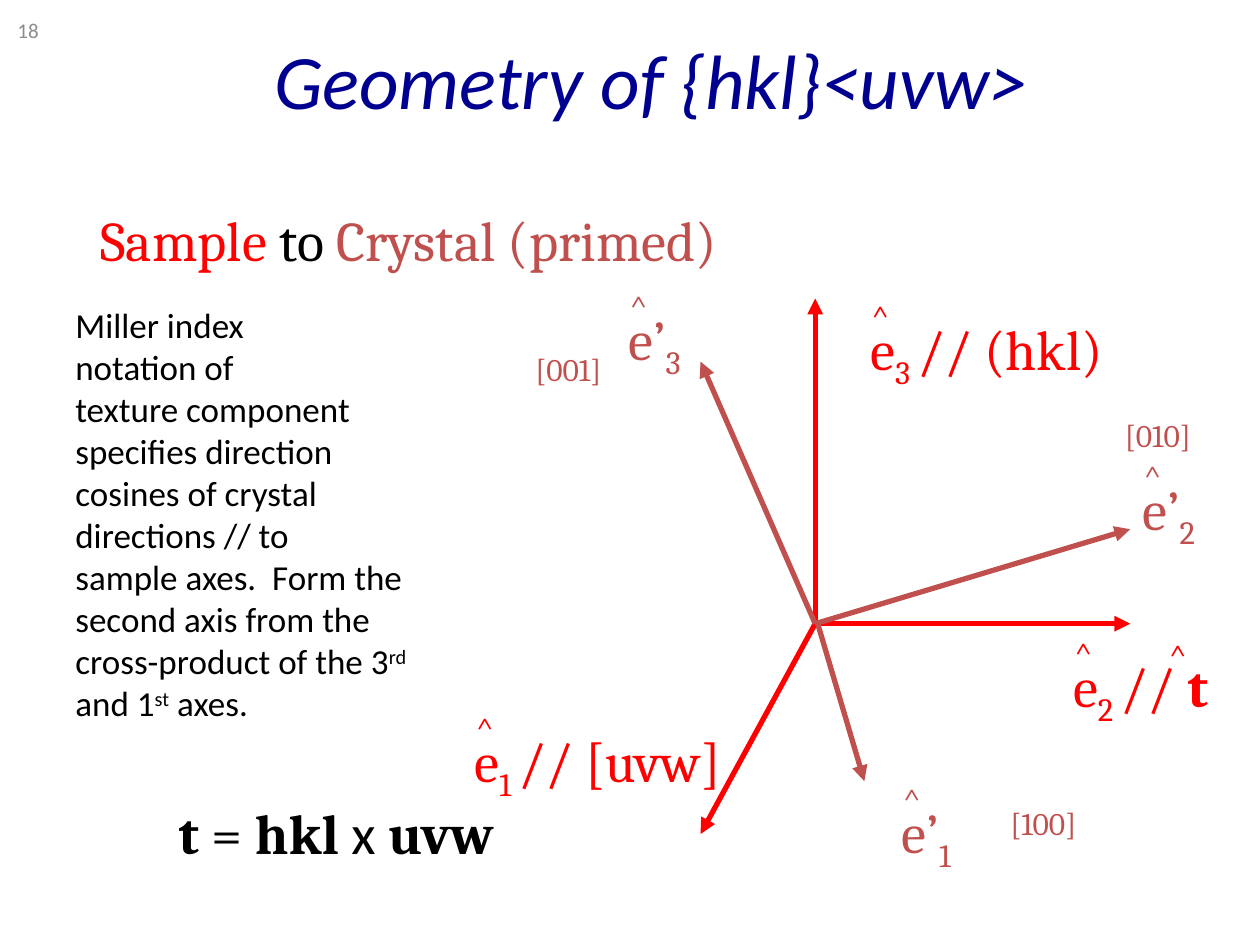
from pptx import Presentation
from pptx.dml.color import RGBColor
from pptx.enum.shapes import MSO_CONNECTOR
from pptx.enum.text import MSO_ANCHOR, MSO_AUTO_SIZE as AutoSize, PP_ALIGN
from pptx.oxml.ns import qn
from pptx.util import Inches, Pt
from lxml.etree import SubElement

RED, BROWN, BLACK, NAVY, GRAY = "FF0000", "C0504D", "000000", "000090", "8C8C8C"
SERIF, SANS = "Cambria", "Calibri"


def rgb(value):
    return RGBColor.from_string(value)


def set_all(target, values):
    for name, value in values.items():
        setattr(target, name, value)


class SlideBuilder:
    def __init__(self, prs):
        self.s = prs.slides.add_slide(prs.slide_layouts[5])
        self.font = {"name": SERIF, "size": 32, "color": BLACK}

    def add_runs(self, p, runs, **style):
        for text, *extra in runs:
            fmt = {**self.font, **style, **(extra[0] if extra else {})}
            color = fmt.pop("color")
            base = fmt.pop("base", 0)
            fmt["size"] = Pt(fmt["size"])
            for i, line in enumerate(text.split("\n")):
                if i:
                    p.add_line_break()
                r = p.add_run()
                r.text = line
                set_all(r.font, fmt)
                r.font.color.rgb = rgb(color)
                if base:
                    r.font._element.set("baseline", str(base * 1000))

    def title(self, text, box, **style):
        sp = self.s.shapes.title
        set_all(sp, dict(zip(("left", "top", "width", "height"), map(Inches, box))))
        tf = sp.text_frame
        tf.vertical_anchor = MSO_ANCHOR.MIDDLE
        p = tf.paragraphs[0]
        p.alignment = PP_ALIGN.CENTER
        self.add_runs(p, [(text,)], **style)

    def text(self, runs, box, wrap=False, frame=None, **style):
        tf = self.s.shapes.add_textbox(*map(Inches, box)).text_frame
        set_all(tf, {"word_wrap": wrap, "auto_size": AutoSize.SHAPE_TO_FIT_TEXT, **(frame or {})})
        self.add_runs(tf.paragraphs[0], runs, **style)

    def hat(self, x, y, color):
        self.text([("^",)], (x, y, 0.39, 0.5), size=18, color=color)

    def axis_label(self, runs, x, y, width, color):
        self.text(runs, (x, y, width, 0.64), color=color)
        self.hat(x + 0.01, y - 0.14, color)

    def arrow(self, start, end, color):
        cx = self.s.shapes.add_connector(MSO_CONNECTOR.STRAIGHT, *map(Inches, start + end))
        cx.line.color.rgb = rgb(color)
        cx.line.width = Pt(3)
        SubElement(cx.line._get_or_add_ln(), qn("a:tailEnd"), type="triangle")
        SubElement(cx._element.spPr, qn("a:effectLst"))


def main():
    prs = Presentation()
    set_all(prs, {"slide_width": Inches(10), "slide_height": Inches(7.5)})
    b = SlideBuilder(prs)
    sub, sup, bold = {"base": -25}, {"base": 30}, {"bold": True}

    b.text([("18",)], (0.04, 0.04, 0.78, 0.4), wrap=True,
           frame={"vertical_anchor": MSO_ANCHOR.MIDDLE, "auto_size": AutoSize.NONE},
           name=SANS, size=12, color=GRAY)
    b.title("Geometry of {hkl}<uvw>", (0.92, 0, 8.5, 1.25),
            name=SANS, size=44, color=NAVY, italic=True)

    origin = (6.47, 4.95)
    for color, ends in ((RED, ((6.47, 2.37), (8.97, 4.95), (5.56, 6.62))),
                        (BROWN, ((5.56, 2.87), (8.97, 4.2)))):
        for end in ends:
            b.arrow(origin, end, color)
    b.arrow((6.49, 4.95), (6.86, 6.2), BROWN)

    sample_axes = (
        ("1", [("// [uvw]",)], 3.67, 5.72, 2.33),
        ("2", [("// ",), ("t", bold)], 8.42, 5.12, 1.37),
        ("3", [("// (hkl)",)], 6.81, 2.45, 2.14),
    )
    for index, meaning, x, y, width in sample_axes:
        b.axis_label([("e",), (index + " ", sub), *meaning], x, y, width, RED)
    b.hat(9.18, 5, RED)

    crystal_axes = (
        ("1", 7.06, 6.28, "[100]", 7.92, 6.33),
        ("2", 8.97, 3.72, "[010]", 8.83, 3.25),
        ("3", 4.89, 2.37, "[001]", 4.15, 2.73),
    )
    for index, x, y, direction, dir_x, dir_y in crystal_axes:
        b.axis_label([("e’",), (index, sub)], x, y, 0.69, BROWN)
        b.text([(direction,)], (dir_x, dir_y, 1, 0.5), size=18, color=BROWN)

    b.text([("Miller index\nnotation of\ntexture component\nspecifies direction\n"
             "cosines of crystal\ndirections // to\nsample axes.  Form the second "
             "axis from the cross-product of the 3",),
            ("rd", sup), (" and 1",), ("st", sup), (" axes.",)],
           (0.5, 2.36, 3, 3.47), wrap=True, name=SANS, size=20)
    b.text([("Sample ", {"color": RED}), ("to ",), ("Crystal (primed)", {"color": BROWN})],
           (0.7, 1.58, 5.39, 0.64))
    b.text([("t", bold), (" = ",), ("hkl ", bold), ("x ", {"name": SANS}), ("uvw", bold)],
           (1.32, 6.29, 2.78, 0.64))

    prs.save("out.pptx")


if __name__ == "__main__":
    main()
